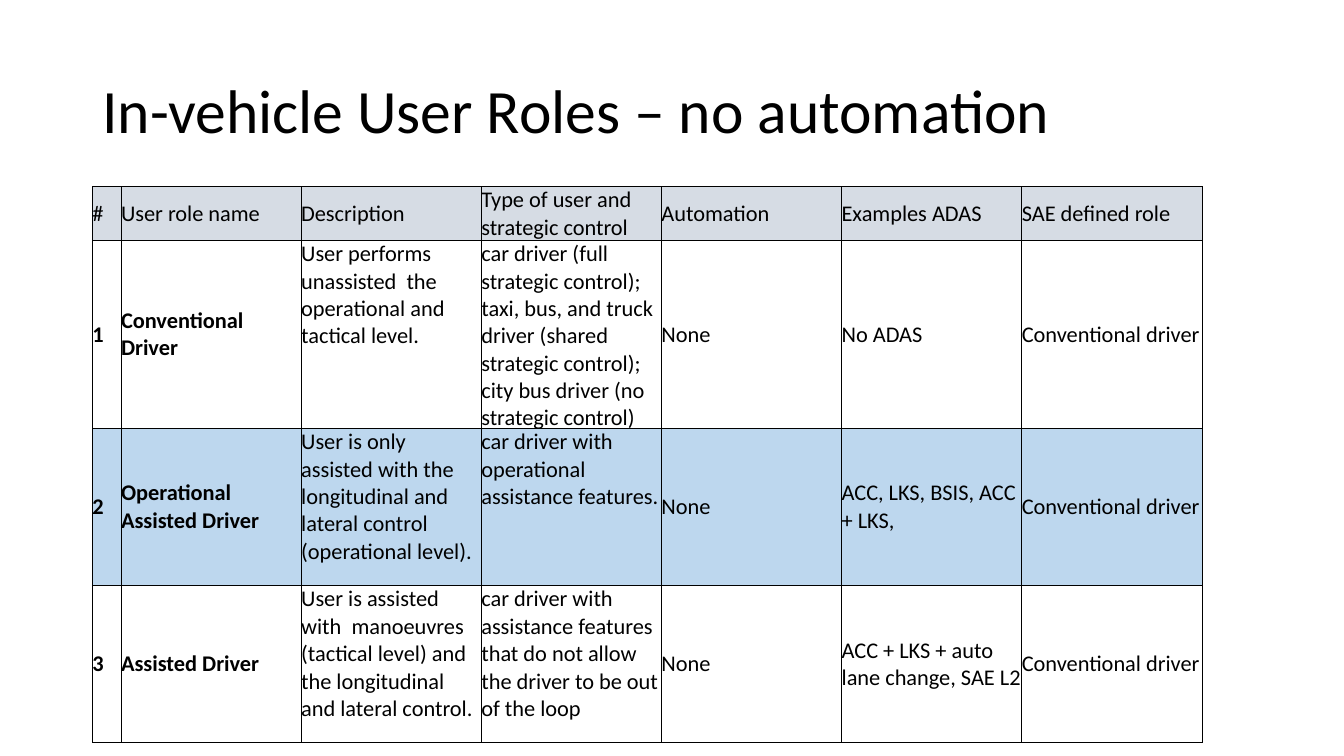
import dataclasses

import lxml.etree
import pptx
import pptx.dml.color
import pptx.enum.text
import pptx.oxml.ns
import pptx.util
from pptx.util import Cm


@dataclasses.dataclass(frozen=True)
class Theme:
    font: str = "Calibri"
    ink: str = "000000"
    header: str = "D6DCE4"
    highlight: str = "BDD7EE"
    title_size: int = 44
    table_size: int = 16
    thin: float = 0.5
    thick: float = 1


theme = Theme()
MIDDLE = pptx.enum.text.MSO_ANCHOR.MIDDLE
TOP = pptx.enum.text.MSO_ANCHOR.TOP


def write(frame, text, size=theme.table_size, bold=False, anchor=MIDDLE, spacing=1.0):
    frame.word_wrap = True
    frame.vertical_anchor = anchor
    para = frame.paragraphs[0]
    para.line_spacing = spacing
    span = para.add_run()
    span.text = text
    span.font.name = theme.font
    span.font.size = pptx.util.Pt(size)
    span.font.bold = bold
    span.font.color.rgb = pptx.dml.color.RGBColor.from_string(theme.ink)


def add_borders(cell, widths):
    properties = cell._tc.get_or_add_tcPr()
    for side, width in zip(("lnL", "lnR", "lnT", "lnB"), widths):
        line = lxml.etree.SubElement(properties, pptx.oxml.ns.qn(f"a:{side}"))
        line.set("w", str(pptx.util.Pt(width)))
        solid = lxml.etree.SubElement(line, pptx.oxml.ns.qn("a:solidFill"))
        colour = lxml.etree.SubElement(solid, pptx.oxml.ns.qn("a:srgbClr"))
        colour.set("val", theme.ink)


deck = pptx.Presentation()
deck.slide_width = Cm(33.87)
deck.slide_height = Cm(19.05)
page = deck.slides.add_slide(deck.slide_layouts[6])

box = page.shapes.add_textbox(Cm(2.33), Cm(1.01), Cm(29.21), Cm(3.68))
write(box.text_frame, "In-vehicle User Roles – no automation",
      size=theme.title_size, spacing=0.9)

roles = [
    ["#", "User role name", "Description", "Type of user and strategic control",
     "Automation", "Examples ADAS", "SAE defined role"],
    ["1", "Conventional Driver",
     "User performs unassisted  the operational and tactical level.",
     "car driver (full strategic control); taxi, bus, and truck driver "
     "(shared strategic control); city bus driver (no strategic control)",
     "None", "No ADAS", "Conventional driver"],
    ["2", "Operational Assisted Driver",
     "User is only assisted with the longitudinal and lateral control (operational level).",
     "car driver with operational assistance features.",
     "None", "ACC, LKS, BSIS, ACC + LKS,", "Conventional driver"],
    ["3", "Assisted Driver",
     "User is assisted with  manoeuvres (tactical level) and the longitudinal "
     "and lateral control.",
     "car driver with assistance features that do not allow the driver "
     "to be out of the loop",
     "None", "ACC + LKS + auto lane change, SAE L2", "Conventional driver"],
]
column_widths = [0.72] + [4.54] * 6
row_heights = [1.3] + [3.96] * 3
row_fills = [theme.header, None, theme.highlight, None]

table = page.shapes.add_table(
    len(roles), len(column_widths), Cm(2.33), Cm(4.7),
    Cm(sum(column_widths)), Cm(sum(row_heights))).table
table.first_row = False
table.horz_banding = False
for column, width in zip(table.columns, column_widths):
    column.width = Cm(width)
for row, height in zip(table.rows, row_heights):
    row.height = Cm(height)

for r, role in enumerate(roles):
    thick_edges = range(2, 7) if r == 0 else range(2, 5)
    verticals = [theme.thick if edge in thick_edges else theme.thin for edge in range(8)]
    horizontals = [theme.thin if edge < 2 else theme.thick for edge in range(5)]
    for c, text in enumerate(role):
        cell = table.cell(r, c)
        cell.margin_left = cell.margin_right = cell.margin_top = cell.margin_bottom = 0
        in_body = r > 0
        anchor = TOP if in_body and c in (2, 3) else MIDDLE
        write(cell.text_frame, text, bold=in_body and c < 2, anchor=anchor)
        cell.vertical_anchor = anchor
        add_borders(cell, verticals[c:c + 2] + horizontals[r:r + 2])
        if row_fills[r]:
            cell.fill.solid()
            cell.fill.fore_color.rgb = pptx.dml.color.RGBColor.from_string(row_fills[r])
        else:
            cell.fill.background()

deck.save("out.pptx")
